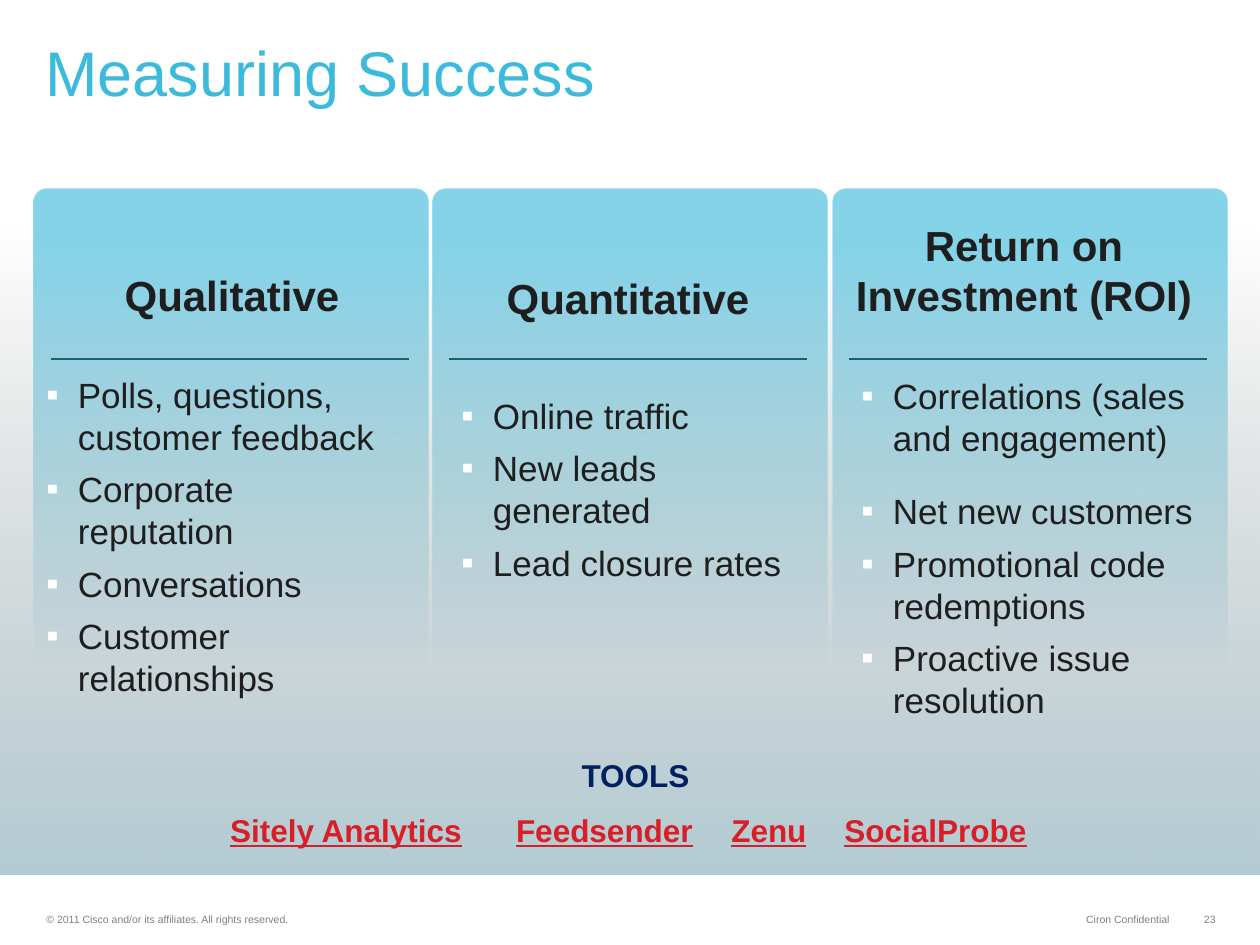
from lxml import etree
from pptx import Presentation, util as u
from pptx.dml.color import RGBColor
from pptx.enum import shapes, text
from pptx.oxml.ns import qn

SCALE = 914400 / 126
FONT = "Arial"
SKY = RGBColor(0x3C, 0xBA, 0xDC)
DEEP_SKY = RGBColor(0x20, 0x93, 0xB2)
TEAL = RGBColor(0x15, 0x62, 0x77)
BLACK = RGBColor(0, 0, 0)
INK = RGBColor(0x1E, 0x1E, 0x1E)
NAVY = RGBColor(0x00, 0x20, 0x60)
RED = RGBColor(0xD8, 0x1F, 0x28)
GRAY = RGBColor(0x7F, 0x7F, 0x7F)

CARD_TOP, CARD_WIDTH, CARD_HEIGHT = 189, 394, 539
RULE_TOP, RULE_WIDTH = 359, 358

# card left, rule left, heading, heading box, list box, bullets with space before in points
COLUMNS = [
    (34, 51, "Qualitative", (53, 263, 358, 63), (34, 367, 358, 380),
     [("Polls, questions, customer feedback", 0), ("Corporate reputation", 6),
      ("Conversations", 6), ("Customer relationships", 6)]),
    (433, 449, "Quantitative", (449, 266, 358, 63), (449, 388, 358, 240),
     [("Online traffic", 0), ("New leads generated", 6), ("Lead closure rates", 6)]),
    (833, 849, "Return on Investment (ROI)", (842, 213, 364, 115), (849, 368, 358, 380),
     [("Correlations (sales and engagement)", 0), ("Net new customers", 18),
      ("Promotional code redemptions", 6), ("Proactive issue resolution", 6)]),
]
# tool name and the width of its slot; the slots stand side by side
TOOLS = [("Sitely Analytics", 300), ("Feedsender", 217), ("Zenu", 112), ("SocialProbe", 221)]
TOOLS_LEFT = 196


def px(*lengths):
    return [u.Emu(round(length * SCALE)) for length in lengths]


def add_gradient_shape(slide, preset, box, stops, angle):
    """Stops are (position, colour, opacity percent); angle is counter-clockwise."""
    panel = slide.shapes.add_shape(preset, *px(*box))
    panel.shadow.inherit = False
    panel.line.fill.background()
    panel.fill.gradient()
    panel.fill.gradient_angle = angle
    for stop, (position, colour, _) in zip(panel.fill.gradient_stops, stops):
        stop.position = position
        stop.color.rgb = colour
    for colour_xml, (_, _, opacity) in zip(panel._element.spPr.iter(qn("a:srgbClr")), stops):
        etree.SubElement(colour_xml, qn("a:alpha")).set("val", str(opacity * 1000))
    return panel


def add_rule(slide, left):
    rule = slide.shapes.add_connector(
        shapes.MSO_CONNECTOR.STRAIGHT, *px(left, RULE_TOP, left + RULE_WIDTH, RULE_TOP))
    rule.line.color.rgb = TEAL
    rule.line.width = u.Pt(0.75)
    etree.SubElement(rule._element.spPr, qn("a:effectLst"))


def style(paragraph, size, colour, bold=False, line_height=1.2):
    paragraph.line_spacing = u.Pt(round(size * line_height, 1))
    for run in paragraph.runs:
        run.font.name = FONT
        run.font.size = u.Pt(size)
        run.font.bold = bold
        run.font.color.rgb = colour


def add_label(slide, wording, box, size, colour, bold=False, align=text.PP_ALIGN.CENTER,
              anchor=text.MSO_ANCHOR.TOP, line_height=1.2):
    frame = slide.shapes.add_textbox(*px(*box)).text_frame
    frame.word_wrap = True
    frame.vertical_anchor = anchor
    frame.text = wording
    label = frame.paragraphs[0]
    label.alignment = align
    style(label, size, colour, bold, line_height)
    return frame


def add_bullet(paragraph):
    props = paragraph._p.get_or_add_pPr()
    props.set("marL", str(u.Inches(0.25)))
    props.set("indent", str(-u.Inches(0.25)))
    colour = etree.SubElement(props, qn("a:buClr"))
    etree.SubElement(colour, qn("a:srgbClr")).set("val", "FFFFFF")
    etree.SubElement(props, qn("a:buFont")).set("typeface", FONT)
    etree.SubElement(props, qn("a:buChar")).set("char", "▪")


def add_bullet_list(slide, box, items):
    frame = slide.shapes.add_textbox(*px(*box)).text_frame
    frame.word_wrap = True
    frame.text = "\n".join(wording for wording, _ in items)
    for paragraph, (_, space) in zip(frame.paragraphs, items):
        add_bullet(paragraph)
        if space:
            paragraph.space_before = u.Pt(space)
        style(paragraph, 20, INK)


def add_column(slide, card_left, rule_left, heading, heading_box, list_box, items):
    card = add_gradient_shape(
        slide, shapes.MSO_SHAPE.ROUNDED_RECTANGLE,
        (card_left, CARD_TOP, CARD_WIDTH, CARD_HEIGHT),
        [(0.1, SKY, 62), (0.88, DEEP_SKY, 0)], 270)
    card.adjustments[0] = 0.035
    add_rule(slide, rule_left)
    add_label(slide, heading, heading_box, 24, INK, bold=True)
    add_bullet_list(slide, list_box, items)


def add_tools(slide):
    add_label(slide, "TOOLS", (494, 750, 283, 53), 18, NAVY, bold=True)
    left = TOOLS_LEFT
    for tool, width in TOOLS:
        frame = add_label(slide, tool, (left, 805, width, 50), 18, RED, bold=True)
        frame.margin_left = frame.margin_right = 0
        frame.paragraphs[0].runs[0].font.underline = True
        left += width


def add_footer(slide):
    right = text.PP_ALIGN.RIGHT
    for wording, left, width, align in [
        ("© 2011 Cisco and/or its affiliates. All rights reserved.", 34, 471,
         text.PP_ALIGN.LEFT),
        ("Ciron Confidential", 1030, 152, right),
        ("23", 1187, 41, right),
    ]:
        frame = add_label(slide, wording, (left, 907, width, 24), 6, GRAY, align=align,
                          anchor=text.MSO_ANCHOR.BOTTOM)
        frame.margin_top = frame.margin_bottom = px(5)[0]


def main():
    deck = Presentation()
    deck.slide_width, deck.slide_height = px(1260, 945)
    slide = deck.slides.add_slide(deck.slide_layouts[6])
    add_gradient_shape(slide, shapes.MSO_SHAPE.RECTANGLE, (0, 223, 1260, 652),
                       [(0, TEAL, 33), (1, BLACK, 0)], 90)
    for column in COLUMNS:
        add_column(slide, *column)
    add_tools(slide)
    add_label(slide, "Measuring Success", (33, 42, 1181, 115), 36, SKY,
              align=text.PP_ALIGN.LEFT, line_height=0.97)
    add_footer(slide)
    deck.save("out.pptx")


if __name__ == "__main__":
    main()
